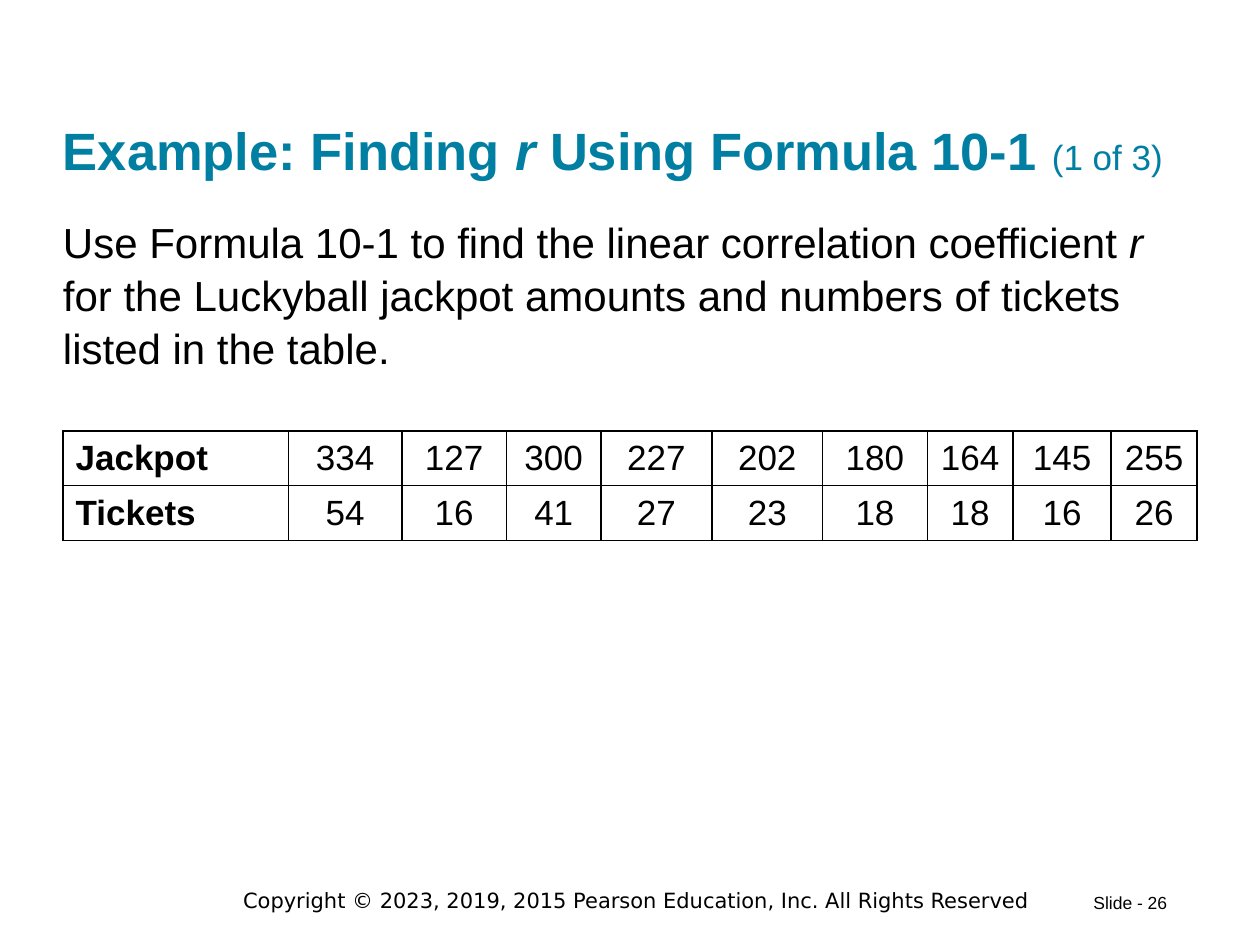
import pptx
import pptx.dml.color
import pptx.enum.text
import pptx.oxml.ns
import pptx.util
from dataclasses import dataclass
from lxml import etree

Inches, Pt = pptx.util.Inches, pptx.util.Pt
Align, Anchor = pptx.enum.text.PP_ALIGN, pptx.enum.text.MSO_ANCHOR

BLACK, TEAL = "000000", "007FA3"


@dataclass(frozen=True)
class Span:
    text: str
    size: float
    color: str = BLACK
    bold: bool = False
    italic: bool = False
    font: str = "Arial"


@dataclass(frozen=True)
class TextBox:
    left: float
    top: float
    width: float
    height: float
    spans: tuple[Span, ...]
    anchor: Anchor = Anchor.TOP
    align: Align = Align.LEFT
    inset: tuple[float, float] = (0, 0)
    line_spacing: float = 1.0
    wrap: bool = True


def rgb(color: str) -> pptx.dml.color.RGBColor:
    return pptx.dml.color.RGBColor.from_string(color)


def add_span(para, span: Span) -> None:
    run = para.add_run()
    run.text = span.text
    run.font.name = span.font
    run.font.size = Pt(span.size)
    run.font.bold = span.bold
    run.font.italic = span.italic
    run.font.color.rgb = rgb(span.color)


def add_text(slide, item: TextBox) -> None:
    box = slide.shapes.add_textbox(
        Inches(item.left), Inches(item.top), Inches(item.width), Inches(item.height))
    frame = box.text_frame
    frame.word_wrap = item.wrap
    frame.vertical_anchor = item.anchor
    frame.margin_left = frame.margin_right = Inches(item.inset[0])
    frame.margin_top = frame.margin_bottom = Inches(item.inset[1])
    para = frame.paragraphs[0]
    para.alignment = item.align
    para.line_spacing = item.line_spacing
    for span in item.spans:
        add_span(para, span)


def add_borders(cell, color: str, width: float) -> None:
    qn = pptx.oxml.ns.qn
    properties = cell._tc.get_or_add_tcPr()
    for index, side in enumerate(("lnL", "lnR", "lnT", "lnB")):
        line = etree.Element(qn(f"a:{side}"), w=str(Pt(width)))
        fill = etree.SubElement(line, qn("a:solidFill"))
        etree.SubElement(fill, qn("a:srgbClr"), val=color)
        properties.insert(index, line)


def add_data_table(slide, rows, left: float, top: float,
                   widths: tuple[float, ...], row_height: float) -> None:
    table = slide.shapes.add_table(
        len(rows), len(widths), Inches(left), Inches(top),
        Inches(sum(widths)), Inches(row_height * len(rows))).table
    table.first_row = table.horz_banding = False
    for column, width in zip(table.columns, widths):
        column.width = Inches(width)
    for row_index, row in enumerate(rows):
        for column_index, value in enumerate(row):
            is_label = column_index == 0
            cell = table.cell(row_index, column_index)
            cell.fill.background()
            cell.vertical_anchor = Anchor.MIDDLE
            para = cell.text_frame.paragraphs[0]
            para.alignment = Align.LEFT if is_label else Align.CENTER
            add_span(para, Span(str(value), 20, bold=is_label))
            add_borders(cell, BLACK, 1)


TITLE = TextBox(0.5, 0.24, 9, 1.2, (
    Span("Example: Finding ", 30, TEAL, bold=True),
    Span("r", 30, TEAL, bold=True, italic=True),
    Span(" Using Formula 10-1 ", 30, TEAL, bold=True),
    Span("(1 of 3)", 20, TEAL),
), anchor=Anchor.BOTTOM)

TASK = TextBox(0.5, 1.7, 9, 1.31, (
    Span("Use Formula 10-1 to find the linear correlation coefficient ", 24),
    Span("r ", 24, italic=True),
    Span("for the Luckyball jackpot amounts and numbers of tickets listed in the table.", 24),
), line_spacing=1.05)

COPYRIGHT = TextBox(1.76, 7.03, 6.58, 0.22, (
    Span("Copyright © 2023, 2019, 2015 Pearson Education, Inc. All Rights Reserved",
         12, font="DejaVu Sans"),
), anchor=Anchor.MIDDLE, align=Align.CENTER, inset=(0.1, 0.05))

SLIDE_NUMBER = TextBox(8.58, 7.03, 0.81, 0.27, (Span("Slide - 26", 10),),
                       inset=(0.1, 0.05), wrap=False)

LOTTERY_ROWS = (
    ("Jackpot", 334, 127, 300, 227, 202, 180, 164, 145, 255),
    ("Tickets", 54, 16, 41, 27, 23, 18, 18, 16, 26),
)
COLUMN_WIDTHS = (1.79, 0.9, 0.83, 0.75, 0.88, 0.88, 0.83, 0.68, 0.78, 0.68)


def main() -> None:
    deck = pptx.Presentation()
    deck.slide_width, deck.slide_height = Inches(10), Inches(7.5)
    slide = deck.slides.add_slide(deck.slide_layouts[6])

    # Footer, title and task
    for item in (COPYRIGHT, SLIDE_NUMBER, TITLE, TASK):
        add_text(slide, item)

    # Jackpots and tickets
    add_data_table(slide, LOTTERY_ROWS, 0.5, 3.42, COLUMN_WIDTHS, 0.41)

    deck.save("out.pptx")


if __name__ == "__main__":
    main()
